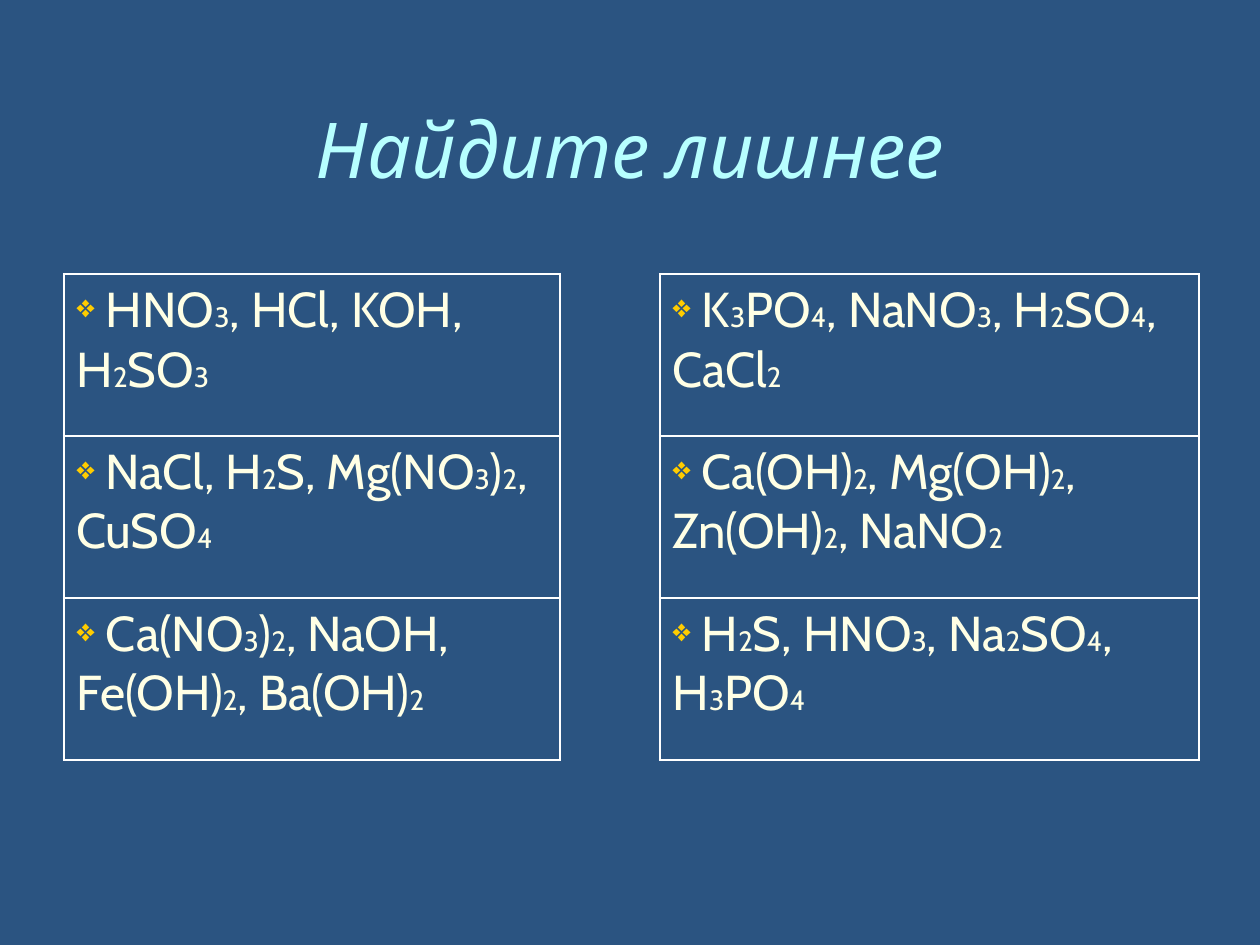
from itertools import groupby

from lxml.etree import SubElement
from pptx import Presentation
from pptx.dml.color import RGBColor
from pptx.enum.text import MSO_ANCHOR, PP_ALIGN
from pptx.oxml.ns import qn
from pptx.util import Inches, Pt

SCALE = Inches(1) / 126
FONT = "Cabin"
NAVY = RGBColor(0x2B, 0x54, 0x81)
AQUA = RGBColor(0xB7, 0xFF, 0xFF)
CREAM = RGBColor(0xFF, 0xFF, 0xE5)
GOLD = RGBColor(0xFF, 0xCC, 0x00)
WHITE = RGBColor(0xFF, 0xFF, 0xFF)

FORMULAS = [
    ("HNO3, HCl, KOH, H2SO3", "K3PO4, NaNO3, H2SO4, CaCl2"),
    ("NaCl, H2S, Mg(NO3)2, CuSO4", "Ca(OH)2, Mg(OH)2, Zn(OH)2, NaNO2"),
    ("Ca(NO3)2, NaOH, Fe(OH)2, Ba(OH)2", "H2S, HNO3, Na2SO4, H3PO4"),
]


def px(n):
    return round(n * SCALE)


def add_title(s, x, y, w, h):
    title = s.shapes.title
    title.left, title.top, title.width, title.height = px(x), px(y), px(w), px(h)
    tf = title.text_frame
    tf.text = "Найдите лишнее"
    tf.vertical_anchor = MSO_ANCHOR.MIDDLE
    p = tf.paragraphs[0]
    p.alignment = PP_ALIGN.CENTER
    font = p.runs[0].font
    font.name, font.size, font.italic = FONT, Pt(44), True
    font.color.rgb = AQUA


def set_borders(cell, visible):
    tcPr = cell._tc.get_or_add_tcPr()
    for side in "LRTB":
        ln = SubElement(tcPr, qn(f"a:ln{side}"), w=str(Pt(1.5)))
        if side in visible:
            fill = SubElement(ln, qn("a:solidFill"))
            SubElement(fill, qn("a:srgbClr"), val=str(WHITE))
        else:
            SubElement(ln, qn("a:noFill"))
    cell.fill.background()


def add_bullet(p):
    pPr = p._p.get_or_add_pPr()
    pPr.set("marL", "0")
    pPr.set("indent", "0")
    color = SubElement(pPr, qn("a:buClr"))
    SubElement(color, qn("a:srgbClr"), val=str(GOLD))
    SubElement(pPr, qn("a:buSzPct"), val="65000")
    SubElement(pPr, qn("a:buChar"), char="❖")


def write_formulas(cell, text):
    p = cell.text_frame.paragraphs[0]
    add_bullet(p)
    for is_index, chars in groupby(f" {text}", str.isdigit):
        r = p.add_run()
        r.text = "".join(chars)
        r.font.name = FONT
        r.font.size = Pt(16 if is_index else 28)
        r.font.color.rgb = CREAM


def add_formula_table(s, x, y, col_widths, row_height):
    rows = len(FORMULAS)
    frame = s.shapes.add_table(rows, len(col_widths), px(x), px(y),
                               px(sum(col_widths)), px(rows * row_height))
    table = frame.table
    table.first_row = table.horz_banding = False
    for col, width in zip(table.columns, col_widths):
        col.width = px(width)
    for i, (left, right) in enumerate(FORMULAS):
        table.rows[i].height = px(row_height)
        for j, text in ((0, left), (2, right)):
            set_borders(table.cell(i, j), "LRTB")
            write_formulas(table.cell(i, j), text)
        set_borders(table.cell(i, 1), "LR")
    table.cell(0, 1).merge(table.cell(rows - 1, 1))


def main():
    prs = Presentation()
    prs.slide_width, prs.slide_height = px(1260), px(945)
    s = prs.slides.add_slide(prs.slide_layouts[5])
    s.background.fill.solid()
    s.background.fill.fore_color.rgb = NAVY
    add_title(s, 63, 53, 1134, 189)
    add_formula_table(s, 64, 274, (496, 100, 539), 162)
    prs.save("out.pptx")


if __name__ == "__main__":
    main()
